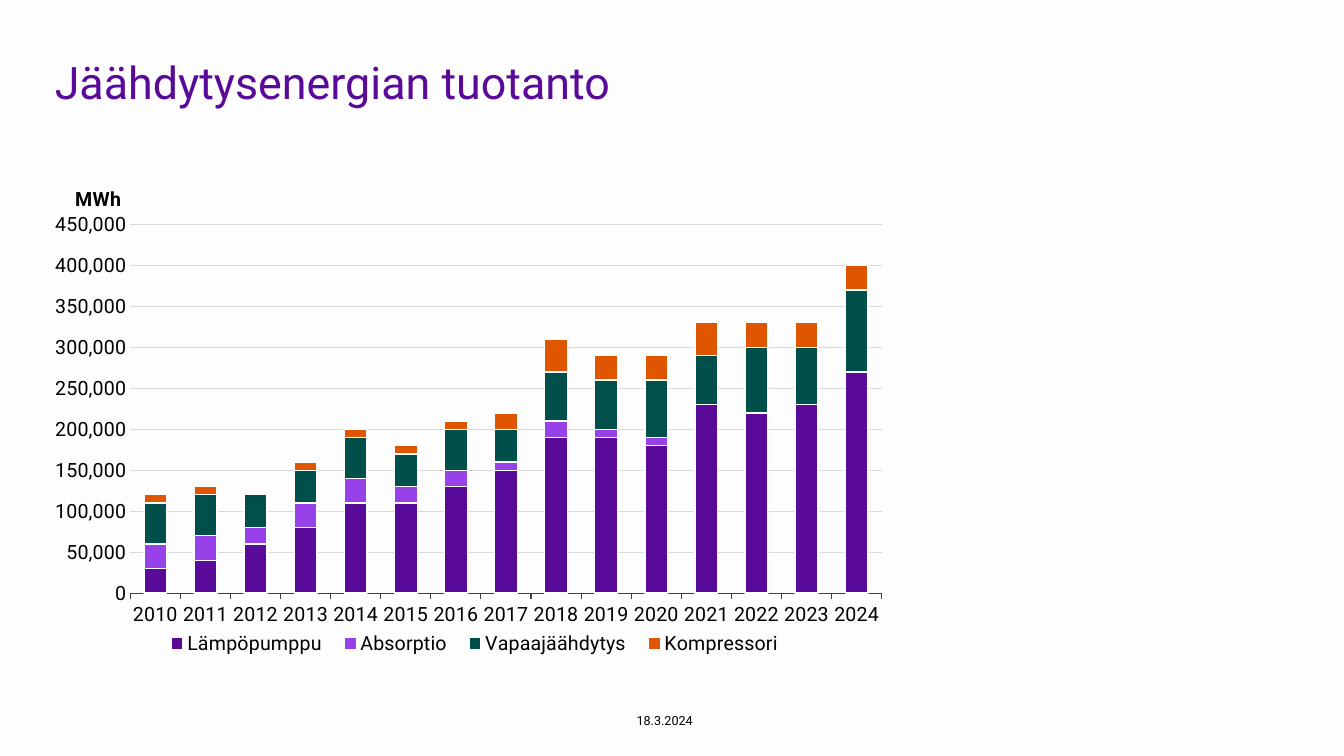
from lxml.etree import SubElement
from pptx import Presentation
from pptx.chart.data import CategoryChartData
from pptx.dml.color import RGBColor
from pptx.enum.chart import XL_CHART_TYPE, XL_LEGEND_POSITION, XL_TICK_MARK
from pptx.enum.text import MSO_ANCHOR, MSO_AUTO_SIZE, PP_ALIGN
from pptx.oxml import parse_xml
from pptx.oxml.ns import nsdecls, qn
from pptx.util import Cm, Pt

COLORS = {
    "background": "FEFDFD", "title": "590A99", "text": "000000",
    "axis": "404040", "grid": "D9D9D9", "border": "FFFFFF",
    "Lämpöpumppu": "590A99", "Absorptio": "9642E8",
    "Vapaajäähdytys": "004F4B", "Kompressori": "E05500",
}
YEARS = [str(year) for year in range(2010, 2025)]
# Cooling production in tens of thousands of MWh
PRODUCTION = {
    "Lämpöpumppu": [3, 4, 6, 8, 11, 11, 13, 15, 19, 19, 18, 23, 22, 23, 27],
    "Absorptio": [3, 3, 2, 3, 3, 2, 2, 1, 2, 1, 1, 0, 0, 0, 0],
    "Vapaajäähdytys": [5, 5, 4, 4, 5, 4, 5, 4, 6, 6, 7, 6, 8, 7, 10],
    "Kompressori": [1, 1, 0, 1, 1, 1, 1, 2, 4, 3, 3, 4, 3, 3, 3],
}


class SlideBuilder:
    font_name = "Roboto"

    def __init__(self, presentation):
        self.slide = presentation.slides.add_slide(presentation.slide_layouts[5])
        fill = self.slide.background.fill
        fill.solid()
        fill.fore_color.rgb = self.color("background")

    def color(self, name):
        return RGBColor.from_string(COLORS[name])

    def style_font(self, font, size, color="text", bold=False):
        font.name = self.font_name
        font.size = Pt(size)
        font.bold = bold
        font.color.rgb = self.color(color)

    def style_line(self, line, color, width):
        line.color.rgb = self.color(color)
        line.width = Pt(width)

    def fill_text(self, shape, text, size, color, align, anchor, right_inset):
        frame = shape.text_frame
        frame.text = text
        frame.word_wrap = True
        frame.auto_size = MSO_AUTO_SIZE.NONE
        frame.vertical_anchor = anchor
        frame.margin_left, frame.margin_right = 0, right_inset
        frame.margin_top = frame.margin_bottom = Cm(0.13)
        paragraph = frame.paragraphs[0]
        paragraph.alignment = align
        self.style_font(paragraph.runs[0].font, size, color)
        return paragraph

    def title(self, text, left, top, width, height):
        shape = self.slide.shapes.title
        shape.left, shape.top, shape.width, shape.height = left, top, width, height
        paragraph = self.fill_text(shape, text, 32, "title", PP_ALIGN.LEFT,
                                   MSO_ANCHOR.TOP, Cm(0.25))
        paragraph.line_spacing = 0.9

    def label(self, text, left, top, width, height):
        shape = self.slide.shapes.add_textbox(left, top, width, height)
        self.fill_text(shape, text, 9, "text", PP_ALIGN.CENTER, MSO_ANCHOR.MIDDLE, 0)

    def place(self, element, previous_tag=None, **settings):
        """Give a chart part a manual layout, after the named child or first."""
        for old_layout in element.findall(qn("c:layout")):
            element.remove(old_layout)
        layout = parse_xml(f"<c:layout {nsdecls('c')}><c:manualLayout/></c:layout>")
        for tag, value in settings.items():
            SubElement(layout[0], qn(f"c:{tag}")).set("val", str(value))
        if previous_tag:
            element.find(qn(previous_tag)).addnext(layout)
        else:
            element.insert(0, layout)

    def stacked_chart(self, years, production, unit, left, top, width, height):
        data = CategoryChartData(number_format="#,##0")
        data.categories = years
        for name, values in production.items():
            data.add_series(name, [value * 10000 for value in values])
        chart = self.slide.shapes.add_chart(
            XL_CHART_TYPE.COLUMN_STACKED, left, top, width, height, data).chart
        chart.has_title = False
        self.style_font(chart.font, 14)

        # Columns
        plot = chart.plots[0]
        plot.gap_width, plot.overlap = 120, 100
        plot.vary_by_categories = False
        for series in plot.series:
            series.format.fill.solid()
            series.format.fill.fore_color.rgb = self.color(series.name)
            self.style_line(series.format.line, "border", 1)

        # Axes
        category_axis, value_axis = chart.category_axis, chart.value_axis
        for axis in (category_axis, value_axis):
            self.style_font(axis.tick_labels.font, 14)
            axis.minor_tick_mark = XL_TICK_MARK.NONE
        category_axis.major_tick_mark = XL_TICK_MARK.OUTSIDE
        self.style_line(category_axis.format.line, "axis", 0.75)
        value_axis.major_tick_mark = XL_TICK_MARK.NONE
        value_axis.format.line.fill.background()
        value_axis.minimum_scale, value_axis.maximum_scale = 0, 450000
        value_axis.major_unit = 50000
        value_axis.tick_labels.number_format = "#,##0"
        value_axis.tick_labels.number_format_is_linked = False
        self.style_line(value_axis.major_gridlines.format.line, "grid", 0.5)

        # Unit above the value axis, written horizontally
        frame = value_axis.axis_title.text_frame
        frame.text = unit
        self.style_font(frame.paragraphs[0].runs[0].font, 14, bold=True)
        title = value_axis.axis_title._element
        body = title.find(".//" + qn("a:bodyPr"))
        body.set("rot", "0")
        body.set("vert", "horz")
        self.place(title, "c:tx", xMode="edge", yMode="edge", x=0.02, y=0)

        # Legend and plot area
        chart.has_legend = True
        chart.legend.position = XL_LEGEND_POSITION.BOTTOM
        chart.legend.include_in_layout = False
        self.style_font(chart.legend.font, 14)
        self.place(chart.legend._element, "c:legendPos", xMode="edge", yMode="edge",
                   x=0.12, y=0.93, w=0.76, h=0.07)
        self.place(chart._chartSpace.chart.plotArea, layoutTarget="inner",
                   xMode="edge", yMode="edge", x=0.09, y=0.09, w=0.895, h=0.77)


def main():
    presentation = Presentation()
    presentation.slide_width, presentation.slide_height = Cm(33.87), Cm(19.05)
    builder = SlideBuilder(presentation)
    # Heading
    builder.title("Jäähdytysenergian tuotanto", Cm(1.38), Cm(1.4), Cm(31.06), Cm(2.77))
    # Production by source
    builder.stacked_chart(YEARS, PRODUCTION, "MWh",
                          Cm(1.38), Cm(4.57), Cm(21.16), Cm(12.07))
    # Date
    builder.label("18.3.2024", Cm(15.34), Cm(17.65), Cm(2.82), Cm(1.02))
    presentation.save("out.pptx")


if __name__ == "__main__":
    main()
